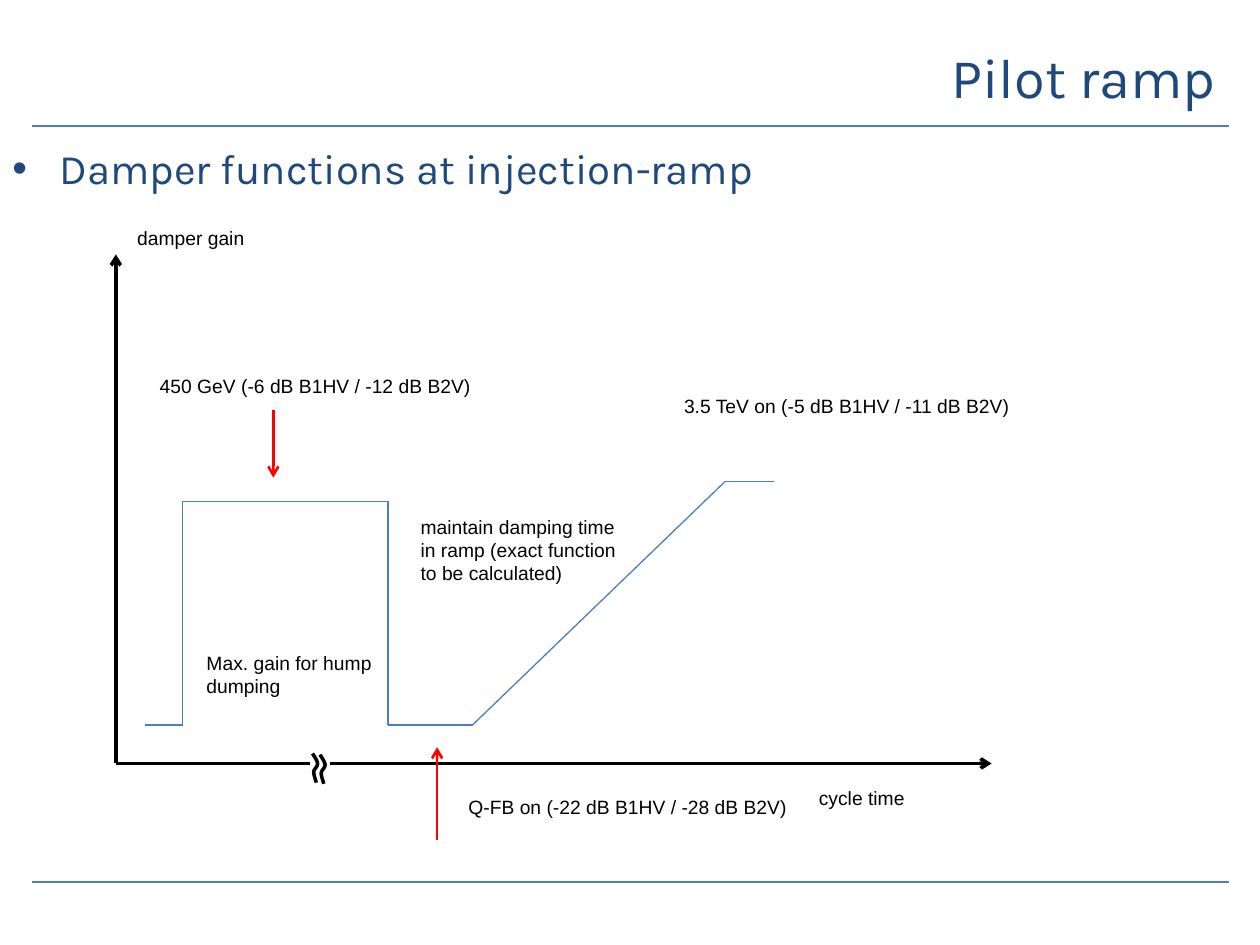
from itertools import pairwise

from lxml.etree import SubElement
from pptx import Presentation
from pptx.dml.color import RGBColor
from pptx.enum.shapes import MSO_CONNECTOR as Connector
from pptx.enum.text import MSO_ANCHOR as Anchor, PP_ALIGN as Align
from pptx.oxml.ns import qn
from pptx.util import Pt

BLUE, NAVY, BLACK, RED = "4B7EBC", "1F497D", "000000", "FF0000"


def color(value):
    return RGBColor.from_string(value)


def add_line(page, start, end, stroke=BLUE, width=0.75, arrow=False):
    line = page.shapes.add_connector(
        Connector.STRAIGHT, *(Pt(value) for value in (*start, *end)))
    line.line.color.rgb = color(stroke)
    line.line.width = Pt(width)
    if arrow:
        SubElement(line.line._get_or_add_ln(), qn("a:tailEnd"), type="arrow")
    SubElement(line._element.spPr, qn("a:effectLst"))


def add_text(page, text, left, top, width, height, size=11, font="Arial",
             ink=BLACK, align=Align.LEFT, anchor=Anchor.TOP, wrap=False,
             bullet_indent=None):
    box = page.shapes.add_textbox(Pt(left), Pt(top), Pt(width), Pt(height))
    frame = box.text_frame
    frame.word_wrap = wrap
    frame.vertical_anchor = anchor
    for number, words in enumerate(text.split("\n")):
        para = frame.add_paragraph() if number else frame.paragraphs[0]
        para.alignment = align
        if bullet_indent:
            props = para._p.get_or_add_pPr()
            props.set("marL", str(Pt(bullet_indent)))
            props.set("indent", str(-Pt(bullet_indent)))
            SubElement(props, qn("a:buFont"), typeface="Arial")
            SubElement(props, qn("a:buChar"), char="•")
        span = para.add_run()
        span.text = words
        span.font.name = font
        span.font.size = Pt(size)
        span.font.color.rgb = color(ink)


def curve_points(start, control_a, control_b, end, steps=8):
    """Points along a cubic curve, without its start."""
    for step in range(1, steps + 1):
        t = step / steps
        weights = ((1 - t) ** 3, 3 * t * (1 - t) ** 2, 3 * t * t * (1 - t), t ** 3)
        yield tuple(
            sum(weight * value for weight, value in zip(weights, axis))
            for axis in zip(start, control_a, control_b, end))


def add_break_mark(page, left, top):
    upper = ((0, 0), (1.4, 2.2), (2.9, 4.3), (2.9, 5.8))
    lower = ((2.9, 5.8), (2.9, 7.9), (0.7, 8.6), (0.7, 10.8))
    tail = ((0.7, 10.8), (0.7, 12.2), (2.2, 16.6), (2.2, 16.6))
    points = [(Pt(left + x), Pt(top + y))
              for curve in (upper, lower, tail) for x, y in curve_points(*curve)]
    builder = page.shapes.build_freeform(Pt(left), Pt(top))
    builder.add_line_segments(points, close=False)
    mark = builder.convert_to_shape()
    mark.shadow.inherit = False
    mark.fill.background()
    mark.line.color.rgb = color(BLACK)
    mark.line.width = Pt(2)


def add_axes(page):
    origin = (66.2, 436.3)
    add_line(page, origin, (177, 436.3), BLACK, 2)
    add_line(page, (188.6, 436.3), (566.6, 436.3), BLACK, 2, arrow=True)
    add_line(page, origin, (66.2, 145.4), BLACK, 2, arrow=True)
    add_break_mark(page, 178.6, 430.6)
    add_break_mark(page, 182.9, 431.3)


def add_gain_curve(page):
    low, high, final = 414.3, 286.4, 275.2
    points = [(82.8, low), (104.5, low), (104.5, high), (221.8, high),
              (221.8, low), (270, low), (414.3, final), (442.1, final)]
    for start, end in pairwise(points):
        add_line(page, start, end)


def main():
    deck = Presentation()
    deck.slide_width, deck.slide_height = Pt(720), Pt(540)
    page = deck.slides.add_slide(deck.slide_layouts[6])

    # Heading and rules
    for y in (72, 504):
        add_line(page, (18, y), (702, y), width=1.5)
    add_text(page, "Pilot ramp", 48.2, 12.2, 653.8, 62.6, size=32, font="Karla",
             ink=NAVY, align=Align.RIGHT, anchor=Anchor.MIDDLE, wrap=True)
    add_text(page, "Damper functions at injection-ramp", 0, 77.8, 720, 59.8,
             size=24, font="Karla", ink=NAVY, wrap=True, bullet_indent=27)

    # Diagram
    add_axes(page)
    add_gain_curve(page)
    add_line(page, (156.2, 234), (156.2, 272.9), RED, 1.5, arrow=True)
    add_line(page, (249.8, 480.2), (249.8, 427), RED, 1.5, arrow=True)

    # Labels
    add_text(page, "damper gain", 71.3, 126, 110.2, 27.4)
    add_text(page, "cycle time", 460.8, 445.7, 92.2, 27.4)
    add_text(page, "450 GeV (-6 dB B1HV / -12 dB B2V)", 84.2, 210.2, 192.2, 20.9,
             wrap=True)
    add_text(page, "Max. gain for hump dumping", 110.9, 368.6, 111.6, 61.9, wrap=True)
    add_text(page, "maintain damping time\nin ramp (exact function\nto be calculated)",
             233.3, 290.9, 187.2, 61.9)
    add_text(page, "Q-FB on (-22 dB B1HV / -28 dB B2V)", 260.6, 450.7, 197.3, 33.8)
    add_text(page, "3.5 TeV on (-5 dB B1HV / -11 dB B2V)", 383.8, 221.8, 206.6, 33.8)

    deck.save("out.pptx")


if __name__ == "__main__":
    main()
